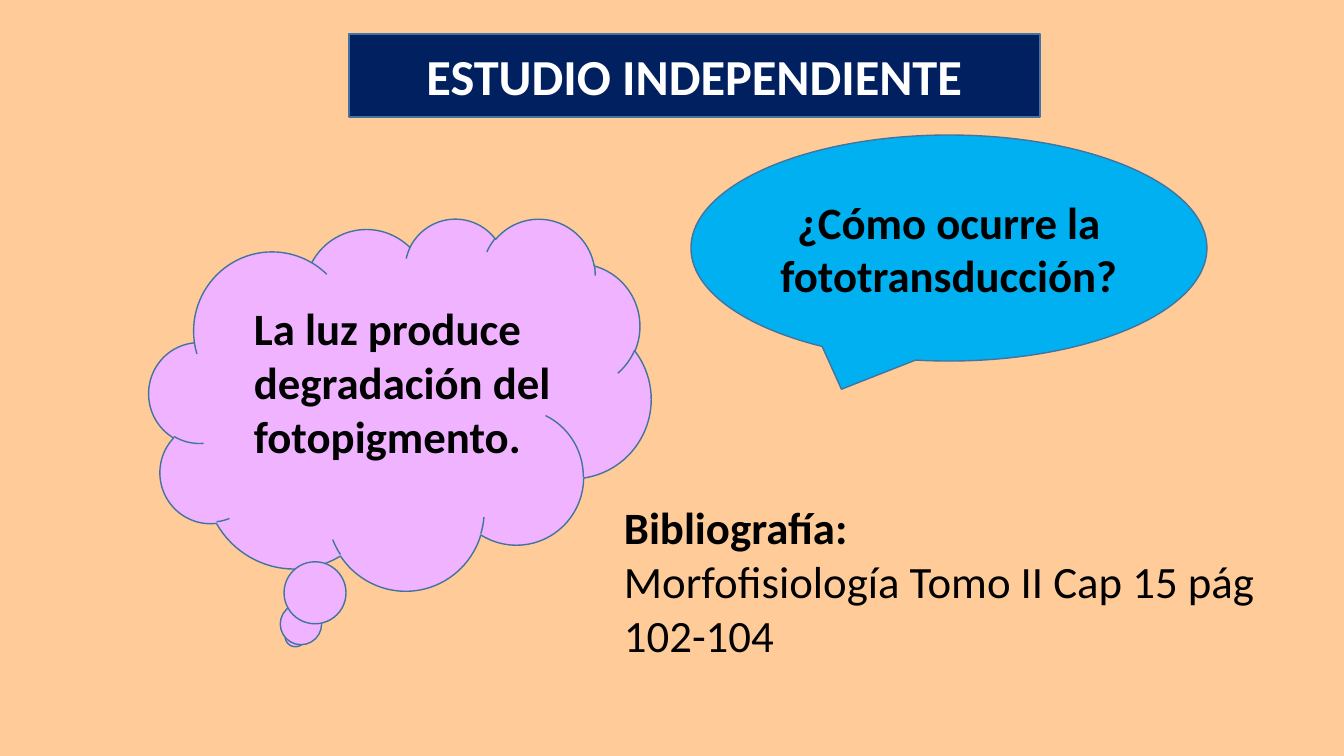
import pptx
import pptx.util
import pptx.dml.color
import pptx.enum.shapes
import pptx.enum.text

PX = 914400 / 100.8
THEME = {
    "font": "Calibri", "title": 36, "body": 32,
    "back": "FFCC99", "navy": "002060", "sky": "00B0F0", "pink": "EFB3FF",
    "edge": "43739E", "white": "FFFFFF", "black": "000000",
}
KIND = pptx.enum.shapes.MSO_SHAPE
ALIGN = pptx.enum.text.PP_ALIGN
ANCHOR = pptx.enum.text.MSO_ANCHOR


def tint(name):
    return pptx.dml.color.RGBColor.from_string(THEME[name])


def write(shape, lines, size, color, align, anchor):
    frame = shape.text_frame
    frame.word_wrap = True
    frame.vertical_anchor = anchor
    frame.text = "\n".join(text for text, bold in lines)
    for par, (text, bold) in zip(frame.paragraphs, lines):
        par.alignment = align
        par.font.name = THEME["font"]
        par.font.size = pptx.util.Pt(THEME[size])
        par.font.bold = bold
        par.font.color.rgb = tint(color)


deck = pptx.Presentation()
deck.slide_width = round(1344 * PX)
deck.slide_height = round(756 * PX)
slide = deck.slides.add_slide(deck.slide_layouts[6])
slide.background.fill.solid()
slide.background.fill.fore_color.rgb = tint("back")

shapes = [
    (KIND.RECTANGLE, (349, 34, 691, 83), "navy", "ESTUDIO INDEPENDIENTE", "title", "white"),
    (KIND.OVAL_CALLOUT, (691, 135, 516, 226), "sky", "¿Cómo ocurre la fototransducción?", "body", "black"),
    (KIND.CLOUD_CALLOUT, (149, 218, 502, 372), "pink", "", "body", "black"),
]
for kind, box, fill, text, size, color in shapes:
    shape = slide.shapes.add_shape(kind, *[round(n * PX) for n in box])
    shape.shadow.inherit = False
    shape.fill.solid()
    shape.fill.fore_color.rgb = tint(fill)
    shape.line.color.rgb = tint("edge")
    shape.line.width = pptx.util.Pt(1)
    if text:
        write(shape, [(text, True)], size, color, ALIGN.CENTER, ANCHOR.MIDDLE)

notes = [
    ((244, 296, 448, 173), [("La luz produce degradación del fotopigmento.", True)]),
    ((614, 495, 672, 173), [("Bibliografía:", True), ("Morfofisiología Tomo II Cap 15 pág 102-104", False)]),
]
for box, lines in notes:
    label = slide.shapes.add_textbox(*[round(n * PX) for n in box])
    write(label, lines, "body", "black", ALIGN.LEFT, ANCHOR.TOP)
    label.text_frame.auto_size = pptx.enum.text.MSO_AUTO_SIZE.SHAPE_TO_FIT_TEXT

deck.save("out.pptx")
